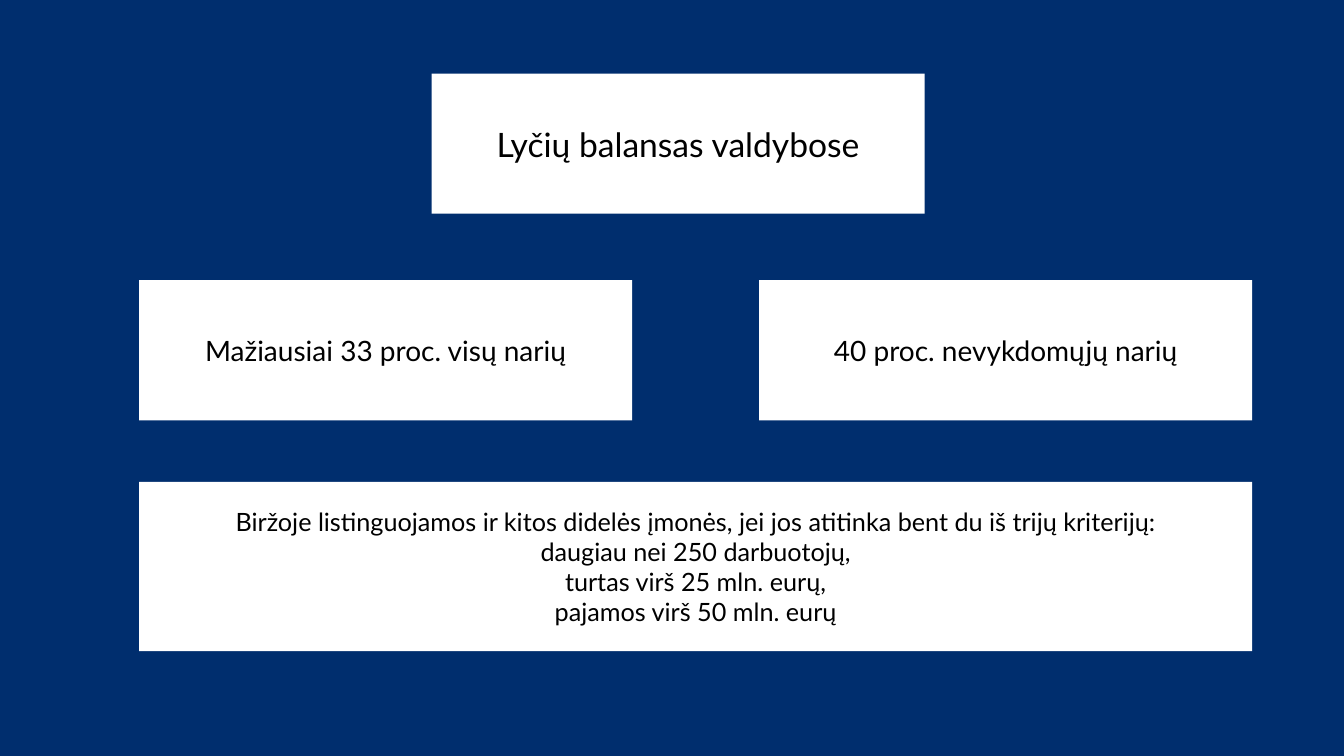
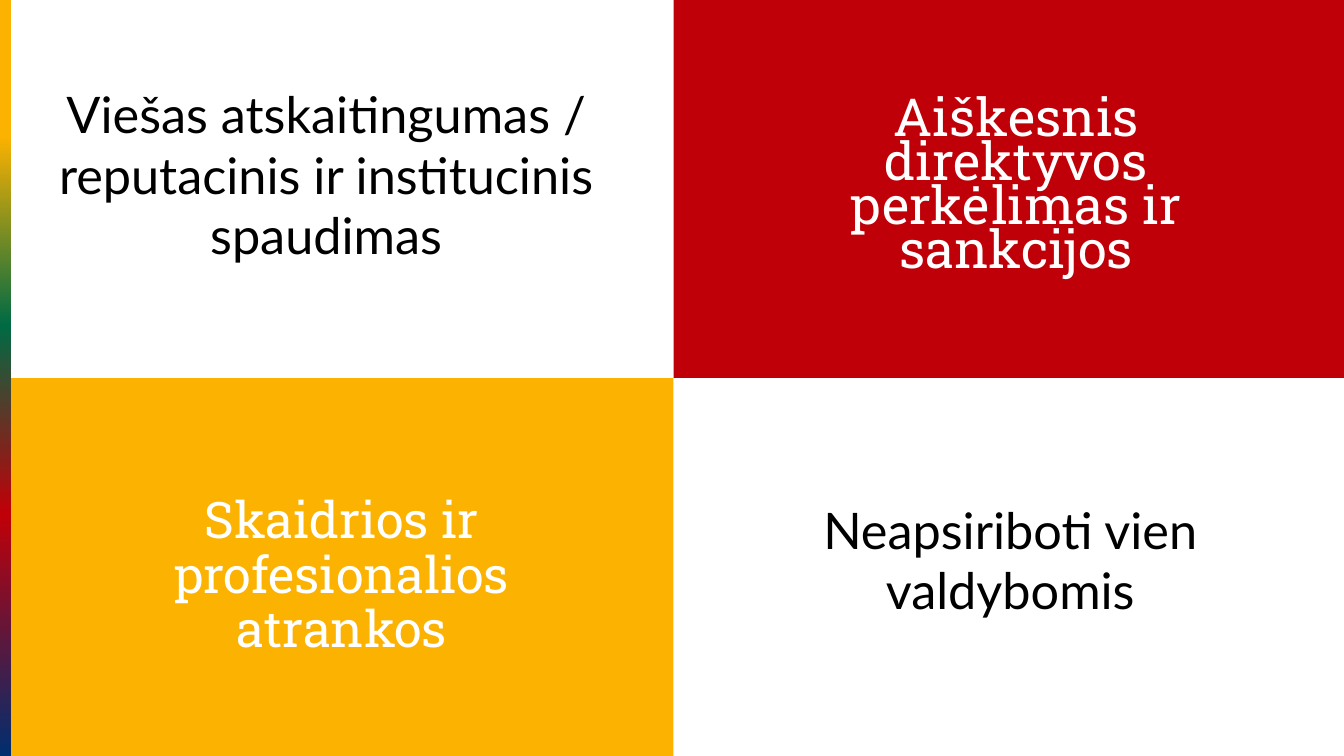
"""Build two slides on gender balance on boards and the steps that support it."""
from lxml import etree
from pptx import Presentation
from pptx.dml.color import RGBColor
from pptx.enum.shapes import MSO_SHAPE
from pptx.enum.text import MSO_ANCHOR, MSO_AUTO_SIZE, PP_ALIGN
from pptx.oxml.ns import qn
from pptx.util import Inches, Pt

RECTANGLE = MSO_SHAPE.RECTANGLE
TOP, MIDDLE = MSO_ANCHOR.TOP, MSO_ANCHOR.MIDDLE
NO_AUTOFIT = MSO_AUTO_SIZE.NONE
CENTER = PP_ALIGN.CENTER

NAVY = RGBColor(0x00, 0x2E, 0x6E)
RED = RGBColor(0xC0, 0x00, 0x08)
YELLOW = RGBColor(0xFC, 0xB2, 0x00)
GREEN = RGBColor(0x00, 0x6A, 0x44)
WHITE = RGBColor(0xFF, 0xFF, 0xFF)
BLACK = RGBColor(0x00, 0x00, 0x00)
SANS, SLAB = "Lato", "Roboto Slab"

WIDTH, HEIGHT = 13.33, 7.5
BAR_WIDTH = 0.11
BAR_STOPS = [(18, YELLOW), (43, GREEN), (68, RED), (100, NAVY)]
TITLE_ONLY, BLANK = 5, 6

BALANCE_TITLE = "Lyčių balansas valdybose"
QUOTAS = ["Mažiausiai 33 proc. visų narių", "40 proc. nevykdomųjų narių"]
CRITERIA = [
    "Biržoje listinguojamos ir kitos didelės įmonės, jei jos atitinka bent du iš trijų kriterijų:",
    "daugiau nei 250 darbuotojų,",
    "turtas virš 25 mln. eurų,",
    "pajamos virš 50 mln. eurų",
]
CARD_WIDTH, CARD_HEIGHT = 4.89, 1.39
CARDS_LEFT, CARDS_WIDTH = 1.38, 11.04

MID_X, MID_Y = 6.68, HEIGHT / 2
PANELS = [
    (YELLOW, (BAR_WIDTH, MID_Y, MID_X - BAR_WIDTH, MID_Y)),
    (RED, (MID_X, 0, WIDTH - MID_X, MID_Y)),
]
STEPS = [
    (["Viešas atskaitingumas /", "reputacinis ir institucinis spaudimas"],
     (0.44, 0.78, 5.59, 1.92), SANS, 36, BLACK, TOP, 1),
    (["Neapsiriboti vien valdybomis"],
     (7.08, 4.9, 5.88, 1.31), SANS, 36, BLACK, TOP, 1),
    (["Aiškesnis direktyvos perkėlimas ir sankcijos"],
     (7.5, 1.15, 5.16, 1.45), SLAB, 37.4, WHITE, MIDDLE, 0.7),
    (["Skaidrios ir profesionalios atrankos"],
     (0.81, 5, 5.16, 1.45), SLAB, 36, WHITE, MIDDLE, 0.9),
]


def inches(area):
    return [Inches(value) for value in area]


def write(box, lines, size, font=SANS, color=BLACK, anchor=MIDDLE, spacing=1):
    frame = box.text_frame
    frame.text = "\n".join(lines)
    frame.word_wrap = True
    frame.auto_size = NO_AUTOFIT
    frame.vertical_anchor = anchor
    for para in frame.paragraphs:
        para.alignment = CENTER
        para.line_spacing = spacing
        for span in para.runs:
            span.font.name = font
            span.font.size = Pt(size)
            span.font.color.rgb = color


def add_panel(page, area, color):
    panel = page.shapes.add_shape(RECTANGLE, *inches(area))
    panel.shadow.inherit = False
    panel.line.fill.background()
    panel.fill.solid()
    panel.fill.fore_color.rgb = color
    return panel


def add_gradient_bar(page):
    bar = add_panel(page, (0, 0, BAR_WIDTH, HEIGHT), NAVY)
    bar.fill.gradient()
    bar.fill.gradient_angle = 270
    stops = bar.element.spPr.find(qn("a:gradFill")).find(qn("a:gsLst"))
    for stop in list(stops):
        stops.remove(stop)
    for percent, color in BAR_STOPS:
        stop = etree.SubElement(stops, qn("a:gs"), pos=str(percent * 1000))
        etree.SubElement(stop, qn("a:srgbClr"), val=str(color))


def build_balance(deck):
    page = deck.slides.add_slide(deck.slide_layouts[TITLE_ONLY])
    page.background.fill.solid()
    page.background.fill.fore_color.rgb = NAVY
    title = page.shapes.title
    title.left, title.top, title.width, title.height = inches(
        (4.28, 0.73, CARD_WIDTH, CARD_HEIGHT))
    title.fill.solid()
    title.fill.fore_color.rgb = WHITE
    write(title, [BALANCE_TITLE], 24)
    step = CARDS_WIDTH - CARD_WIDTH
    for index, quota in enumerate(QUOTAS):
        area = (CARDS_LEFT + index * step, 2.78, CARD_WIDTH, CARD_HEIGHT)
        write(add_panel(page, area, WHITE), [quota], 20)
    write(add_panel(page, (CARDS_LEFT, 4.78, CARDS_WIDTH, 1.68), WHITE), CRITERIA, 18)


def build_steps(deck):
    page = deck.slides.add_slide(deck.slide_layouts[BLANK])
    add_gradient_bar(page)
    for color, area in PANELS:
        add_panel(page, area, color)
    for lines, area, font, size, color, anchor, spacing in STEPS:
        box = page.shapes.add_textbox(*inches(area))
        write(box, lines, size, font, color, anchor, spacing)


def main():
    deck = Presentation()
    deck.slide_width, deck.slide_height = inches((WIDTH, HEIGHT))
    build_balance(deck)
    build_steps(deck)
    deck.save("out.pptx")


if __name__ == "__main__":
    main()
